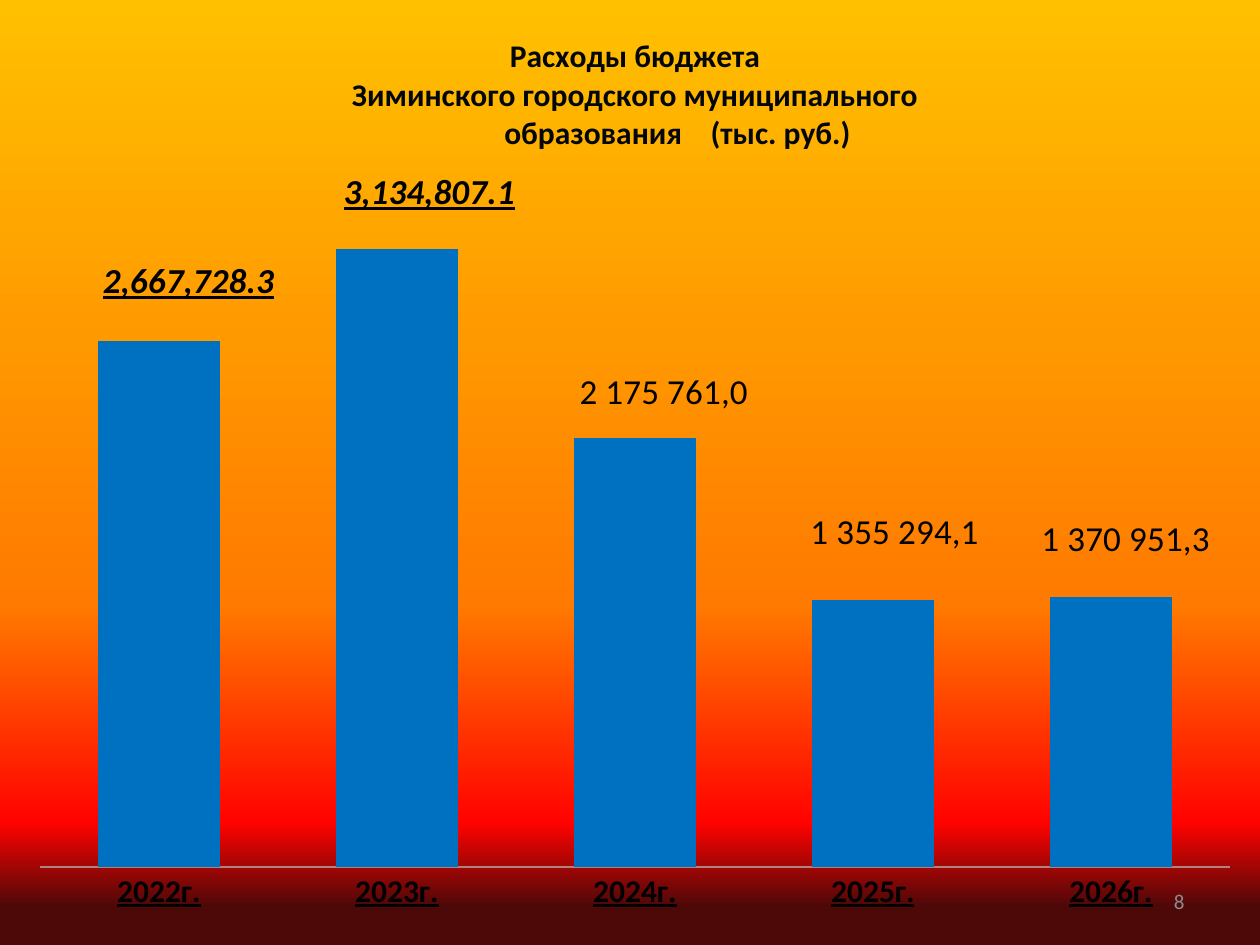
from lxml import etree
from pptx import Presentation
from pptx.chart import data as chart_data
from pptx.dml.color import RGBColor
from pptx.enum import chart as kinds, text
from pptx.oxml import ns
from pptx.util import Pt

BLACK = RGBColor(0, 0, 0)
TITLE_INK = RGBColor(0x03, 0x07, 0x0C)
BLUE = RGBColor(0x00, 0x70, 0xC0)
GREY = RGBColor(0x8C, 0x8C, 0x8C)
AXIS_GREY = RGBColor(0xB3, 0x80, 0x80)
FONT = "Calibri"
NUMBER_FORMAT = "#,##0.0"

BACKGROUND = [
    (0, RGBColor(0xFF, 0xC0, 0x00)),
    (64, RGBColor(0xFF, 0x7A, 0x00)),
    (87, RGBColor(0xFF, 0x03, 0x00)),
    (96, RGBColor(0x4D, 0x08, 0x08)),
]
TITLE = [
    "Расходы бюджета",
    " Зиминского городского муниципального ",
    "            образования    (тыс. руб.)",
]
# year, spending, written label, label shift from the bar's middle in points
SPENDING = [
    ("2022г.", 2667728.3, None, (17, -184.5)),
    ("2023г.", 3134807.1, None, (18.5, -209)),
    ("2024г.", 2175761.0, "2 175 761,0", (16.5, -149)),
    ("2025г.", 1355294.1, "1 355 294,1", (12.5, -115)),
    ("2026г.", 1370951.1, "1 370 951,3", (8.5, -110.5)),
]
CHART_WIDTH, CHART_HEIGHT = 708.5, 527
PLOT_AREA = {"x": 14.2, "y": 97.5, "w": 680, "h": 394.5}


def style(font, size, color=BLACK, bold=False, italic=False, underline=False):
    font.name, font.size = FONT, Pt(size)
    font.bold, font.italic, font.underline = bold, italic, underline
    font.color.rgb = color


def write(frame, lines, align=text.PP_ALIGN.CENTER, **look):
    for index, line in enumerate(lines):
        para = frame.add_paragraph() if index else frame.paragraphs[0]
        para.alignment = align
        span = para.add_run()
        span.text = line
        style(span.font, **look)


def add_xml(parent, tag, **attributes):
    return etree.SubElement(
        parent, ns.qn(tag), {key: str(value) for key, value in attributes.items()})


def make_layout(inner=False, **lengths):
    layout = etree.Element(ns.qn("c:layout"))
    manual = add_xml(layout, "c:manualLayout")
    if inner:
        add_xml(manual, "c:layoutTarget", val="inner")
        add_xml(manual, "c:xMode", val="edge")
        add_xml(manual, "c:yMode", val="edge")
    for key, length in lengths.items():
        whole = CHART_WIDTH if key in "xw" else CHART_HEIGHT
        add_xml(manual, f"c:{key}", val=length / whole)
    return layout


def paint_background(page):
    fill = page.background.fill
    fill.gradient()
    fill.gradient_angle = 270
    stops = page._element.find(".//" + ns.qn("a:gsLst"))
    for stop in list(stops):
        stops.remove(stop)
    for percent, color in BACKGROUND:
        stop = add_xml(stops, "a:gs", pos=percent * 1000)
        add_xml(stop, "a:srgbClr", val=color)


def add_spending_chart(page):
    years, values, _, _ = zip(*SPENDING)
    content = chart_data.CategoryChartData(number_format=NUMBER_FORMAT)
    content.categories = years
    content.add_series("Series 1", values)
    chart = page.shapes.add_chart(
        kinds.XL_CHART_TYPE.COLUMN_STACKED,
        Pt(8.64), Pt(3.6), Pt(CHART_WIDTH), Pt(CHART_HEIGHT), content).chart
    style(chart.font, 10)
    chart.has_legend = False
    chart.has_title = True
    write(chart.chart_title.text_frame, TITLE, size=18, color=TITLE_INK, bold=True)
    chart.chart_title.include_in_layout = False

    axis = chart.category_axis
    axis.major_tick_mark = kinds.XL_TICK_MARK.NONE
    axis.format.line.color.rgb = AXIS_GREY
    axis.format.line.width = Pt(0.75)
    style(axis.tick_labels.font, 18, bold=True, underline=True)
    scale = chart.value_axis
    scale.minimum_scale, scale.maximum_scale = 0, 3500000
    scale.has_major_gridlines = False
    scale.visible = False

    plot = chart.plots[0]
    plot.gap_width, plot.overlap = 95, 100
    plot.vary_by_categories = False
    series = plot.series[0]
    series.format.fill.solid()
    series.format.fill.fore_color.rgb = BLUE
    label_bars(series)

    area = chart._chartSpace.find(".//" + ns.qn("c:plotArea"))
    for old in area.findall(ns.qn("c:layout")):
        area.remove(old)
    area.insert(0, make_layout(inner=True, **PLOT_AREA))


def label_bars(series):
    value_look = {"size": 20, "bold": True, "italic": True, "underline": True}
    labels = series.data_labels
    labels.show_value = True
    labels.number_format = NUMBER_FORMAT
    labels.number_format_is_linked = False
    style(labels.font, **value_look)
    for index, (_, _, wording, _) in enumerate(SPENDING):
        label = series.points[index].data_label
        if wording:
            write(label.text_frame, [wording], size=20)
        else:
            style(label.font, **value_look)
    nodes = series._element.findall(".//" + ns.qn("c:dLbl"))
    for node, (_, _, wording, (x, y)) in zip(nodes, SPENDING):
        node.insert(1, make_layout(x=x, y=y))
        if not wording:
            number = etree.Element(
                ns.qn("c:numFmt"), formatCode=NUMBER_FORMAT, sourceLinked="0")
            node.insert(2, number)
    for leader in series._element.findall(".//" + ns.qn("c:showLeaderLines")):
        leader.set("val", "0")


def add_page_number(page):
    box = page.shapes.add_textbox(Pt(516.24), Pt(500.4), Pt(167.76), Pt(28.8))
    frame = box.text_frame
    frame.word_wrap = True
    frame.vertical_anchor = text.MSO_ANCHOR.MIDDLE
    write(frame, ["8"], align=text.PP_ALIGN.RIGHT, size=12, color=GREY)


def main():
    deck = Presentation()
    deck.slide_width, deck.slide_height = Pt(720), Pt(540)
    page = deck.slides.add_slide(deck.slide_layouts[6])
    paint_background(page)
    add_page_number(page)
    add_spending_chart(page)
    deck.save("out.pptx")


if __name__ == "__main__":
    main()
